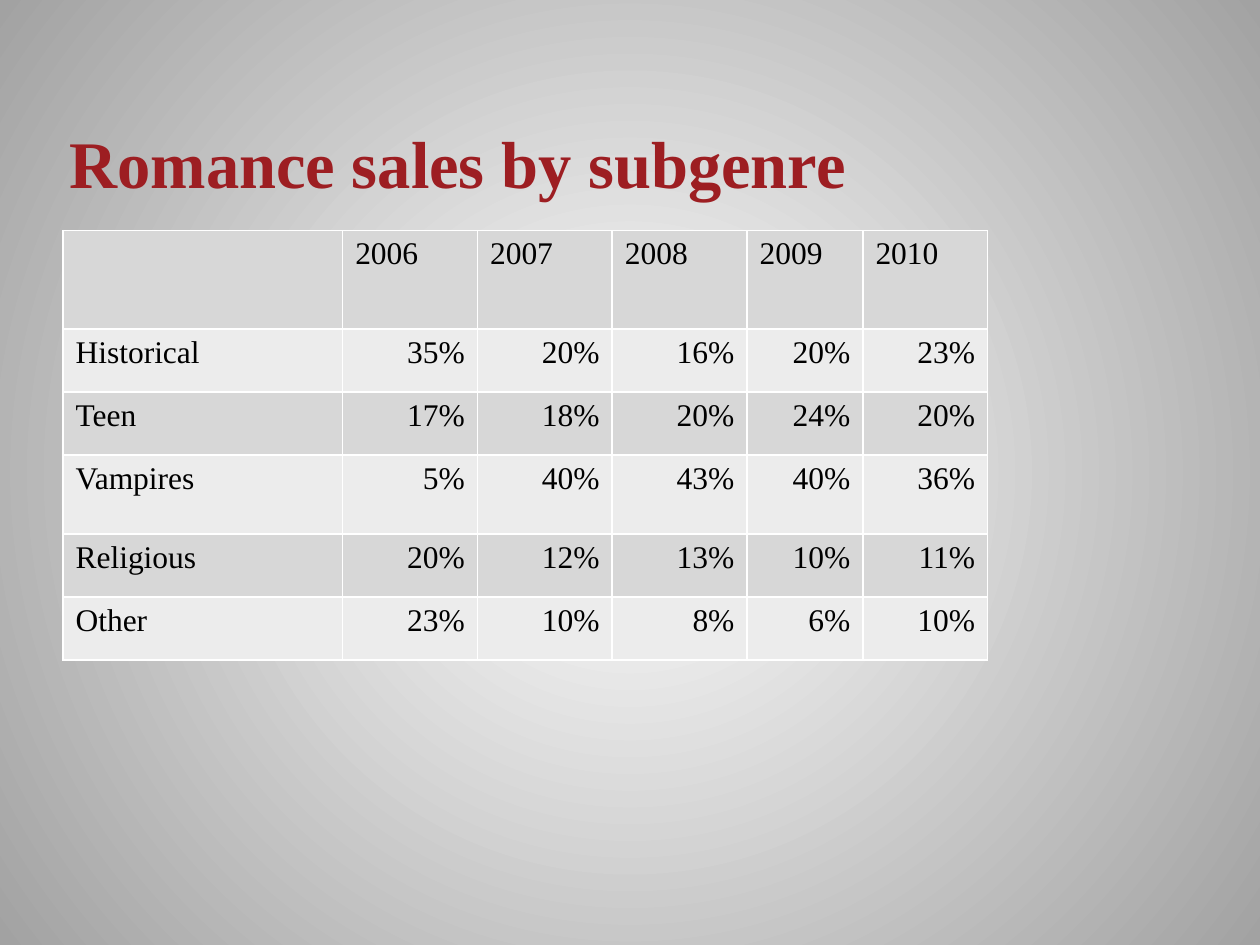
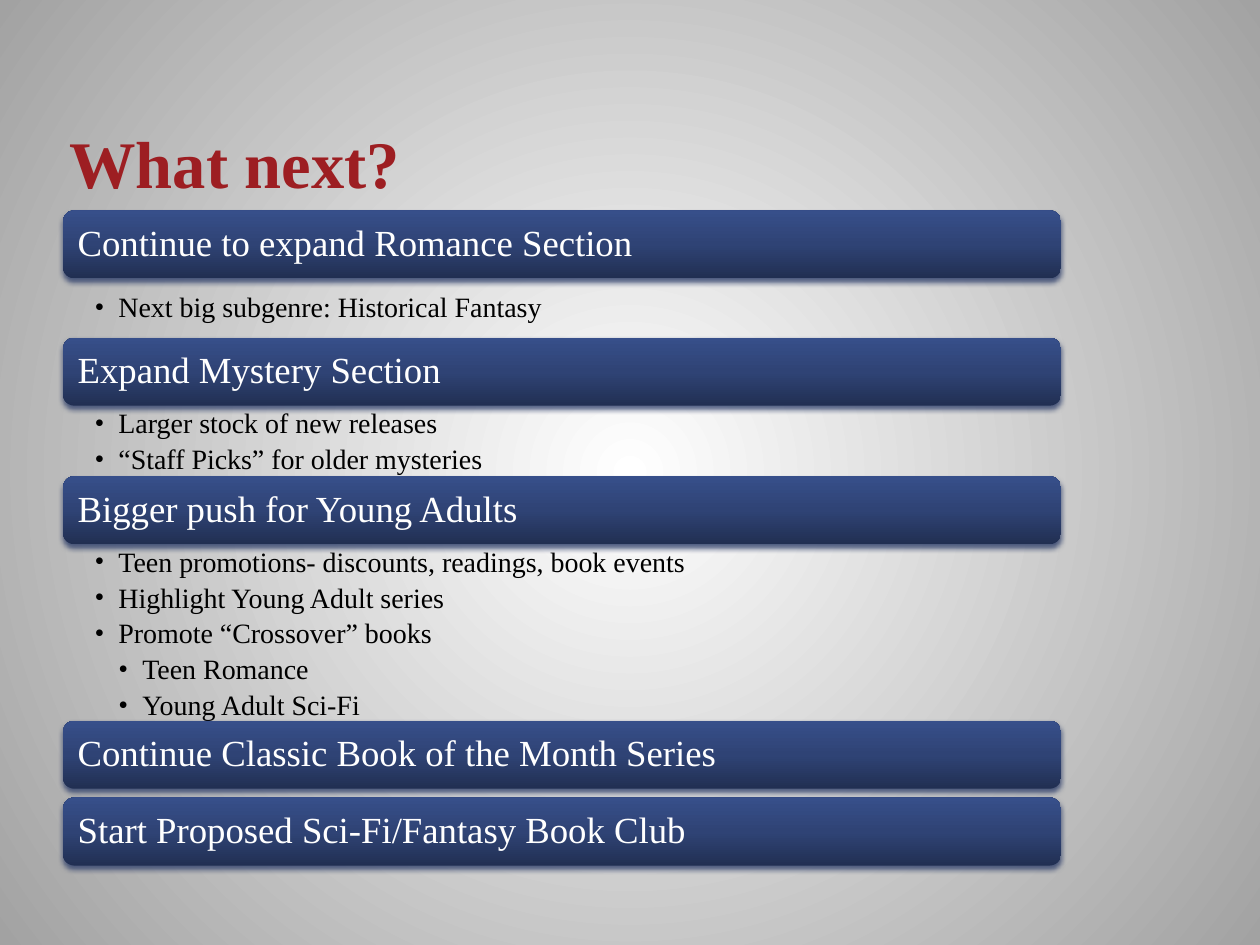
from dataclasses import dataclass

from lxml import etree
from pptx import Presentation
from pptx import util as u
from pptx.dml.color import RGBColor
from pptx.enum import shapes, text
from pptx.oxml import parse_xml
from pptx.oxml.ns import nsdecls, qn


@dataclass(frozen=True)
class Theme:
    font: str = "Times New Roman"
    title_color: str = "9D1E22"
    body_color: str = "000000"
    bar_text_color: str = "FFFFFF"
    border_color: str = "FFFFFF"
    row_colors: tuple[str, ...] = ("D7D7D7", "ECECEC")
    background_stops: tuple[str, ...] = ("FFFFFF", "A2A2A2")
    bar_stops: tuple[str, ...] = ("212F52", "2F4375", "374F8A")
    shadow_color: str = "33436D"
    title_size: float = 38
    table_size: float = 18
    bar_size: float = 21
    detail_size: float = 16


@dataclass(frozen=True)
class Detail:
    wording: str
    level: int = 1


@dataclass(frozen=True)
class Section:
    heading: str
    details: tuple[Detail, ...] = ()
    gap: float = 0
    details_height: float = 0


THEME = Theme()
LEFT = 0.5
CONTENT_WIDTH = 7.92
BAR_HEIGHT = 0.54
SECTIONS_TOP = 1.67
BULLET_INDENT = 0.19
RADIAL = ('<a:path path="circle"><a:fillToRect l="50000" t="50000" '
          'r="50000" b="50000"/></a:path>')
UPWARD = '<a:lin ang="16200000" scaled="0"/>'

COLUMN_WIDTHS = (2.22, 1.07, 1.07, 1.07, 0.92, 0.99)
ROW_HEIGHTS = (0.78, 0.5, 0.5, 0.63, 0.5, 0.5)
SALES = (
    ("", "2006", "2007", "2008", "2009", "2010"),
    ("Historical", "35%", "20%", "16%", "20%", "23%"),
    ("Teen", "17%", "18%", "20%", "24%", "20%"),
    ("Vampires", "5%", "40%", "43%", "40%", "36%"),
    ("Religious", "20%", "12%", "13%", "10%", "11%"),
    ("Other", "23%", "10%", "8%", "6%", "10%"),
)

SECTIONS = (
    Section("Continue to expand Romance Section",
            (Detail("Next big subgenre: Historical Fantasy"),), 0.09, 0.38),
    Section("Expand Mystery Section",
            (Detail("Larger stock of new releases"),
             Detail("“Staff Picks” for older mysteries")), 0, 0.56),
    Section("Bigger push for Young Adults",
            (Detail("Teen promotions- discounts, readings, book events"),
             Detail("Highlight Young Adult series"),
             Detail("Promote “Crossover” books"),
             Detail("Teen Romance", 2),
             Detail("Young Adult Sci-Fi", 2)), 0, 1.4),
    Section("Continue Classic Book of the Month Series", gap=0.07),
    Section("Start Proposed Sci-Fi/Fantasy Book Club"),
)


def style_runs(paragraph, size: float, color: str, bold: bool = False) -> None:
    for run in paragraph.runs:
        run.font.name = THEME.font
        run.font.size = u.Pt(size)
        run.font.bold = bold
        run.font.color.rgb = RGBColor.from_string(color)


def set_margins(frame, left: float, top: float, right: float, bottom: float) -> None:
    frame.margin_left, frame.margin_top = u.Inches(left), u.Inches(top)
    frame.margin_right, frame.margin_bottom = u.Inches(right), u.Inches(bottom)


def paint_gradient(fill, element, colors: tuple[str, ...], shading: str) -> None:
    fill.solid()
    solid = element.find(".//" + qn("a:solidFill"))
    step = 100000 // (len(colors) - 1)
    stops = "".join(
        f'<a:gs pos="{index * step}"><a:srgbClr val="{color}"/></a:gs>'
        for index, color in enumerate(colors))
    gradient = parse_xml(f'<a:gradFill {nsdecls("a")} rotWithShape="1">'
                         f'<a:gsLst>{stops}</a:gsLst>{shading}</a:gradFill>')
    solid.getparent().replace(solid, gradient)


def add_titled_slide(presentation, title: str):
    slide = presentation.slides.add_slide(presentation.slide_layouts[5])
    shape = slide.shapes.title
    shape.left, shape.top = u.Inches(LEFT), u.Inches(0.35)
    shape.width, shape.height = u.Inches(CONTENT_WIDTH), u.Inches(1.25)
    frame = shape.text_frame
    frame.text = title
    frame.auto_size = text.MSO_AUTO_SIZE.NONE
    frame.vertical_anchor = text.MSO_ANCHOR.BOTTOM
    set_margins(frame, 0.05, 0, 0.05, 0)
    frame.paragraphs[0].alignment = text.PP_ALIGN.LEFT
    style_runs(frame.paragraphs[0], THEME.title_size, THEME.title_color, True)
    return slide


def add_borders(cell) -> None:
    properties = cell._tc.get_or_add_tcPr()
    for index, side in enumerate(("lnL", "lnR", "lnT", "lnB")):
        properties.insert(index, parse_xml(
            f'<a:{side} {nsdecls("a")} w="12700"><a:solidFill>'
            f'<a:srgbClr val="{THEME.border_color}"/></a:solidFill></a:{side}>'))


def add_sales_table(slide) -> None:
    table = slide.shapes.add_table(
        len(SALES), len(COLUMN_WIDTHS), u.Inches(LEFT), u.Inches(1.83),
        u.Inches(sum(COLUMN_WIDTHS)), u.Inches(sum(ROW_HEIGHTS))).table
    table.first_row = table.horz_banding = False
    for column, width in zip(table.columns, COLUMN_WIDTHS):
        column.width = u.Inches(width)
    for row_index, (row, height) in enumerate(zip(table.rows, ROW_HEIGHTS)):
        row.height = u.Inches(height)
        for column_index, cell in enumerate(row.cells):
            cell.text_frame.text = SALES[row_index][column_index]
            paragraph = cell.text_frame.paragraphs[0]
            if row_index and column_index:
                paragraph.alignment = text.PP_ALIGN.RIGHT
            style_runs(paragraph, THEME.table_size, THEME.body_color)
            cell.fill.solid()
            cell.fill.fore_color.rgb = RGBColor.from_string(THEME.row_colors[row_index % 2])
            add_borders(cell)


def add_bar(slide, top: float, heading: str) -> None:
    bar = slide.shapes.add_shape(
        shapes.MSO_SHAPE.ROUNDED_RECTANGLE, u.Inches(LEFT), u.Inches(top),
        u.Inches(CONTENT_WIDTH), u.Inches(BAR_HEIGHT))
    bar.line.fill.background()
    properties = bar._element.spPr
    paint_gradient(bar.fill, properties, THEME.bar_stops, UPWARD)
    properties.append(parse_xml(
        f'<a:effectLst {nsdecls("a")}><a:outerShdw blurRad="{u.Pt(3.1)}" '
        f'dist="{u.Pt(2)}" dir="5400000" rotWithShape="0">'
        f'<a:srgbClr val="{THEME.shadow_color}"><a:alpha val="83000"/></a:srgbClr>'
        '</a:outerShdw></a:effectLst>'))
    frame = bar.text_frame
    frame.text = heading
    frame.word_wrap = True
    frame.vertical_anchor = text.MSO_ANCHOR.MIDDLE
    set_margins(frame, 0.09, 0.09, 0.09, 0.09)
    paragraph = frame.paragraphs[0]
    paragraph.alignment = text.PP_ALIGN.LEFT
    paragraph.line_spacing = 0.9
    style_runs(paragraph, THEME.bar_size, THEME.bar_text_color)


def add_details(slide, top: float, section: Section) -> None:
    frame = slide.shapes.add_textbox(
        u.Inches(LEFT), u.Inches(top), u.Inches(CONTENT_WIDTH),
        u.Inches(section.details_height)).text_frame
    frame.word_wrap = True
    set_margins(frame, 0.25, 0.03, 0.16, 0.03)
    frame.text = "\n".join(detail.wording for detail in section.details)
    for paragraph, detail in zip(frame.paragraphs, section.details):
        properties = paragraph._p.get_or_add_pPr()
        properties.set("marL", str(u.Inches(BULLET_INDENT * detail.level)))
        properties.set("indent", str(-u.Inches(BULLET_INDENT)))
        etree.SubElement(properties, qn("a:buFont")).set("typeface", THEME.font)
        etree.SubElement(properties, qn("a:buChar")).set("char", "•")
        paragraph.level = detail.level
        paragraph.line_spacing = 0.9
        paragraph.space_after = u.Pt(3.2)
        style_runs(paragraph, THEME.detail_size, THEME.body_color)


def add_sections(slide) -> None:
    top = SECTIONS_TOP
    for section in SECTIONS:
        add_bar(slide, top, section.heading)
        top += BAR_HEIGHT + section.gap
        if section.details:
            add_details(slide, top, section)
        top += section.details_height


def main() -> None:
    presentation = Presentation()
    presentation.slide_width, presentation.slide_height = u.Inches(10), u.Inches(7.5)
    master = presentation.slide_master
    paint_gradient(master.background.fill, master.element, THEME.background_stops, RADIAL)
    add_sales_table(add_titled_slide(presentation, "Romance sales by subgenre"))
    add_sections(add_titled_slide(presentation, "What next?"))
    presentation.save("out.pptx")


if __name__ == "__main__":
    main()
